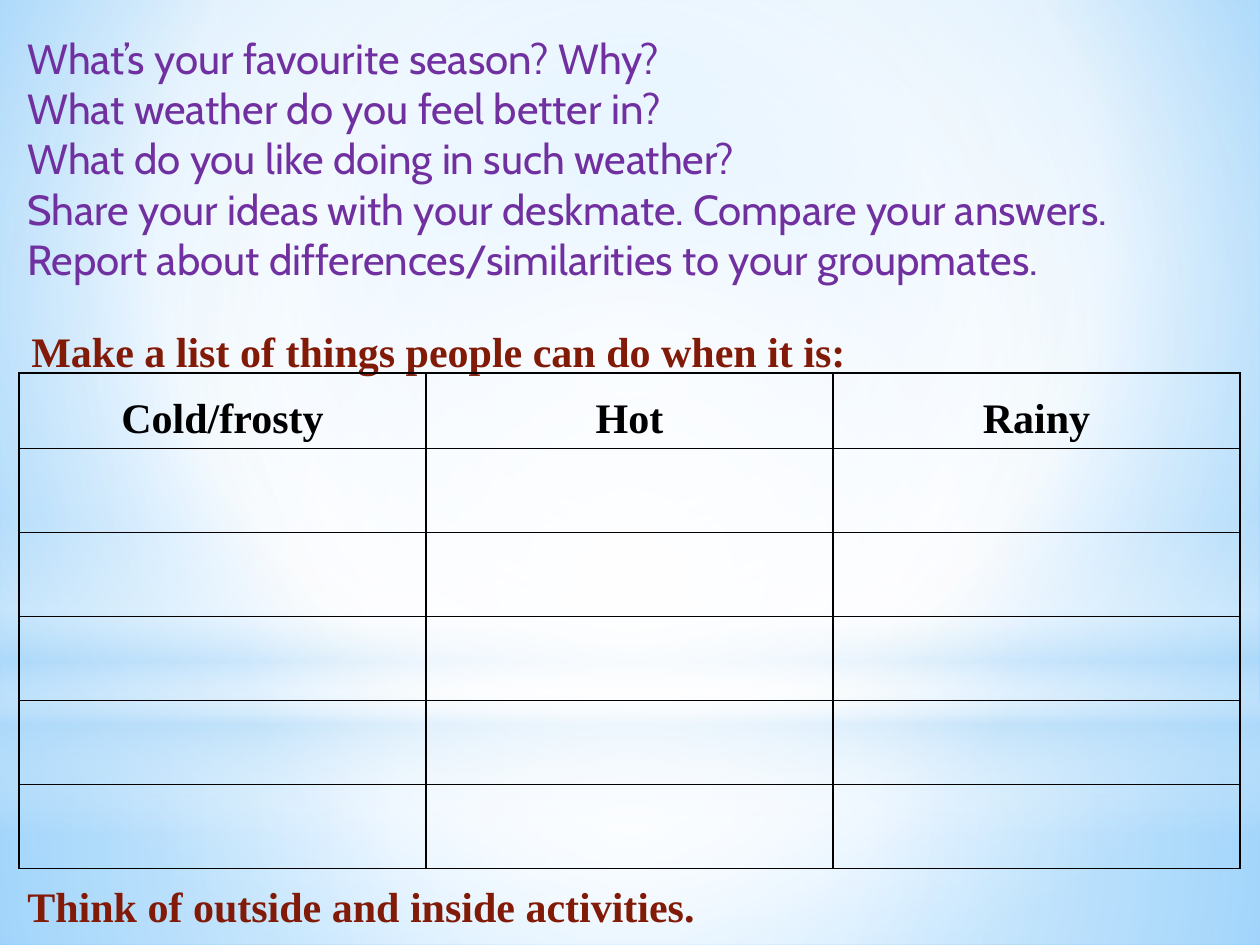
from lxml import etree
from pptx import Presentation
from pptx import util as u
from pptx.dml.color import RGBColor
from pptx.enum import shapes, text
from pptx.oxml import parse_xml

NS = 'xmlns:a="http://schemas.openxmlformats.org/drawingml/2006/main"'
PX = 914400 / 126


def px(*lengths):
    return [u.Emu(round(n * PX)) for n in lengths]


def shade(element, stops, direction):
    stop_xml = "".join(
        f'<a:gs pos="{pos * 1000}"><a:srgbClr val="{color}">'
        f'<a:alpha val="{alpha * 1000}"/></a:srgbClr></a:gs>'
        for pos, color, alpha in stops)
    empty = element.xpath(".//a:noFill")[0]
    empty.getparent().replace(empty, parse_xml(
        f'<a:gradFill {NS} rotWithShape="1"><a:gsLst>{stop_xml}</a:gsLst>{direction}</a:gradFill>'))


radial = ('<a:path path="circle"><a:fillToRect l="{}000" t="{}000" '
          'r="{}000" b="{}000"/></a:path>')
centred = radial.format(50, 50, 50, 50)
vertical = '<a:lin ang="5400000" scaled="0"/>'

prs = Presentation()
prs.slide_width, prs.slide_height = px(1260, 945)
slide = prs.slides.add_slide(prs.slide_layouts[6])

slide.background.fill.background()
shade(slide.element, [(0, "9ED5FF", 100), (60, "FFFFFF", 100), (100, "5BB9FF", 100)],
      radial.format(20, 10, 20, 60))

RECT, OVAL = shapes.MSO_SHAPE.RECTANGLE, shapes.MSO_SHAPE.OVAL
glows = [
    (RECT, 703, 242, [(0, "FFFFFF", 91), (37, "FFFFFF", 76), (100, "B4DCFA", 79)], centred),
    (RECT, 0, 703, [(0, "FFFFFF", 89), (48, "FFFFFF", 62), (100, "B4DCFA", 79)], centred),
    (RECT, 519, 315, [(0, "FFFFFF", 0), (29, "FFFFFF", 30), (45, "B4DCFA", 40),
                      (55, "FFFFFF", 26), (65, "B4DCFA", 60), (100, "FFFFFF", 0)], vertical),
    (OVAL, 220, 703, [(0, "FFFFFF", 100), (56, "FFFFFF", 0)], centred),
]
for outline, top, height, stops, direction in glows:
    glow = slide.shapes.add_shape(outline, *px(0, top, 1260, height))
    glow.shadow.inherit = False
    glow.line.fill.background()
    glow.fill.background()
    shade(glow.element, stops, direction)

questions = "\n".join([
    "What’s your favourite season? Why?",
    "What weather do you feel better in?",
    "What do you like doing in such weather?",
    "Share your ideas with your deskmate. Compare your answers. "
    "Report about differences/similarities to your groupmates.",
])
passages = [
    (questions, (15, 26, 1201, 267), "Cabin", "7030A0", False, 1.0),
    ("Make a list of things people can do when it is:", (19, 294, 1221, 79),
     "Times New Roman", "821A08", True, 1.5),
    ("Think of outside and inside activities.", (15, 849, 1221, 79),
     "Times New Roman", "821A08", True, 1.5),
]
for wording, place, face, color, bold, spacing in passages:
    passage = slide.shapes.add_textbox(*px(*place)).text_frame
    passage.word_wrap = True
    passage.auto_size = text.MSO_AUTO_SIZE.SHAPE_TO_FIT_TEXT
    passage.text = wording
    for paragraph in passage.paragraphs:
        paragraph.line_spacing = spacing
        font = paragraph.runs[0].font
        font.name, font.size, font.bold = face, u.Pt(24), bold
        font.color.rgb = RGBColor.from_string(color)

weathers = ["Cold/frosty", "Hot", "Rainy"]
activities = slide.shapes.add_table(6, 3, *px(19, 373, 1221, 484)).table
activities.first_row = activities.horz_banding = False
for column in activities.columns:
    column.width = px(407)[0]
for index, row in enumerate(activities.rows):
    row.height = px(84 if index else 64)[0]
    for cell, weather in zip(row.cells, weathers):
        cell.fill.background()
        properties = cell._tc.get_or_add_tcPr()
        for position, side in enumerate("LRTB"):
            properties.insert(position, parse_xml(
                f'<a:ln{side} {NS} w="12700"><a:solidFill><a:srgbClr val="000000"/>'
                f'</a:solidFill></a:ln{side}>'))
        if index == 0:
            cell.margin_left, cell.margin_right, cell.margin_top, cell.margin_bottom = px(9, 9, 0, 0)
            heading = cell.text_frame.paragraphs[0]
            heading.text = weather
            heading.alignment = text.PP_ALIGN.CENTER
            heading.line_spacing = 1.5
            font = heading.runs[0].font
            font.name, font.size, font.bold = "Times New Roman", u.Pt(24), True
            font.color.rgb = RGBColor.from_string("000000")

prs.save("out.pptx")
